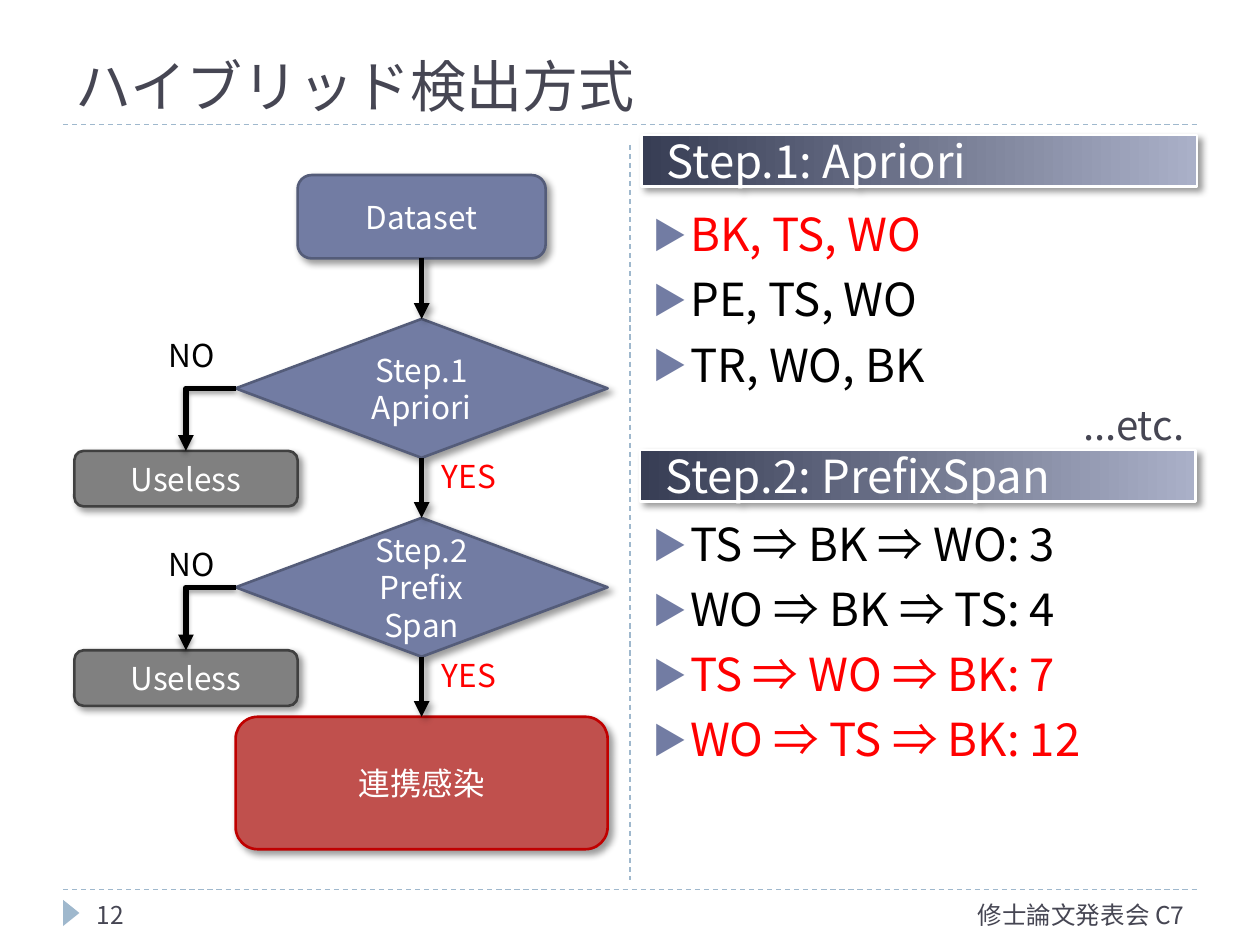
"""Build the slide on the hybrid detection method."""
from lxml.etree import SubElement as Sub
from pptx import Presentation
from pptx.dml.color import RGBColor
from pptx.enum.dml import MSO_LINE as Dash
from pptx.enum.shapes import MSO_CONNECTOR as Conn, MSO_SHAPE as Form
from pptx.enum.text import MSO_ANCHOR as Anchor, MSO_AUTO_SIZE as Fit, PP_ALIGN as Align
from pptx.oxml import parse_xml
from pptx.oxml.ns import nsdecls, qn
from pptx.util import Cm, Pt

FONT = "Noto Sans CJK JP"
WHITE = RGBColor(0xFF, 0xFF, 0xFF)
BLACK = RGBColor(0x00, 0x00, 0x00)
RED = RGBColor(0xFF, 0x00, 0x00)
SLATE = RGBColor(0x46, 0x46, 0x53)
PALE = RGBColor(0x9F, 0xB8, 0xCD)
BLUE = RGBColor(0x72, 0x7C, 0xA3)
NAVY = RGBColor(0x54, 0x5C, 0x79)
GREY = RGBColor(0x80, 0x80, 0x80)
COAL = RGBColor(0x40, 0x40, 0x40)
BRICK = RGBColor(0xC0, 0x50, 0x4D)
BLOOD = RGBColor(0xC0, 0x00, 0x00)
DEEP = RGBColor(0x37, 0x3D, 0x54)
MIST = RGBColor(0xAA, 0xB0, 0xC8)


def write(para, text, size, color, align=Align.LEFT):
    para.alignment = align
    run = para.add_run()
    run.text = text
    run.font.size = Pt(size)
    run.font.color.rgb = color
    run.font.name = FONT
    Sub(run.font._element, qn("a:ea"), typeface=FONT)


def shade(shape, blur=4, dist=3, angle=45):
    props = shape._element.spPr
    for old in props.findall(qn("a:effectLst")):
        props.remove(old)
    props.append(parse_xml(
        f'<a:effectLst {nsdecls("a")}><a:outerShdw blurRad="{Pt(blur)}" dist="{Pt(dist)}" '
        f'dir="{angle * 60000}" algn="tl" rotWithShape="0"><a:srgbClr val="000000">'
        '<a:alpha val="40000"/></a:srgbClr></a:outerShdw></a:effectLst>'))


deck = Presentation()
deck.slide_width, deck.slide_height = Cm(25.4), Cm(19.05)
slide = deck.slides.add_slide(deck.slide_layouts[1])
shapes = slide.shapes

for x1, y1, x2, y2 in [(1.27, 17.93, 24.13, 17.93), (1.27, 2.51, 24.13, 2.51),
                       (12.7, 2.92, 12.7, 17.73)]:
    rule = shapes.add_connector(Conn.STRAIGHT, Cm(x1), Cm(y1), Cm(x2), Cm(y2))
    rule.line.color.rgb = PALE
    rule.line.width = Pt(0.75)
    rule.line.dash_style = Dash.DASH
    Sub(rule._element.spPr, qn("a:effectLst"))

mark = shapes.add_shape(Form.ISOSCELES_TRIANGLE, Cm(1.17), Cm(18.24), Cm(0.53), Cm(0.33))
mark.rotation = 90
mark.shadow.inherit = False
mark.fill.solid()
mark.fill.fore_color.rgb = PALE
mark.line.fill.background()

title = shapes.title
title.left, title.top, title.width, title.height = Cm(1.27), Cm(0.64), Cm(22.86), Cm(1.88)
title.text_frame.auto_size = Fit.NONE
title.text_frame.vertical_anchor = Anchor.BOTTOM
write(title.text_frame.paragraphs[0], "ハイブリッド検出方式", 32, SLATE)

ALT, RHOMB, ROUND = Form.FLOWCHART_ALTERNATE_PROCESS, Form.FLOWCHART_DECISION, Form.ROUNDED_RECTANGLE
nodes = []
for form, mid, top, wide, high, fill, edge, lines in [
    (ALT, 8.5, 3.53, 5, 1.68, BLUE, NAVY, ["Dataset"]),
    (RHOMB, 8.5, 6.43, 7.5, 2.8, BLUE, NAVY, ["Step.1", "Apriori"]),
    (RHOMB, 8.5, 10.44, 7.5, 2.8, BLUE, NAVY, ["Step.2", "Prefix", "Span"]),
    (ALT, 8.5, 14.45, 7.5, 2.67, BRICK, BLOOD, ["連携感染"]),
    (ROUND, 3.75, 9.09, 4.5, 1.12, GREY, COAL, ["Useless"]),
    (ROUND, 3.75, 13.11, 4.5, 1.12, GREY, COAL, ["Useless"]),
]:
    node = shapes.add_shape(form, Cm(mid - wide / 2), Cm(top), Cm(wide), Cm(high))
    node.fill.solid()
    node.fill.fore_color.rgb = fill
    node.line.color.rgb = edge
    node.line.width = Pt(1.5)
    shade(node)
    frame = node.text_frame
    frame.vertical_anchor = Anchor.MIDDLE
    for i, text in enumerate(lines):
        para = frame.add_paragraph() if i else frame.paragraphs[0]
        write(para, text, 18, WHITE, Align.CENTER)
    nodes.append(node)

data, first, second, goal, drop1, drop2 = nodes
for start, end, bent in [(data, first, False), (first, second, False), (second, goal, False),
                         (first, drop1, True), (second, drop2, True)]:
    arrow = shapes.add_connector(Conn.ELBOW if bent else Conn.STRAIGHT, 0, 0, 0, 0)
    arrow.begin_connect(start, 1 if bent else 2)
    arrow.end_connect(end, 0)
    arrow.line.color.rgb = BLACK
    arrow.line.width = Pt(3)
    Sub(arrow.line._get_or_add_ln(), qn("a:tailEnd"), type="triangle")
    if bent:
        arrow._element.spPr.find(qn("a:prstGeom")).set("prst", "bentConnector2")
        shade(arrow, 3, 2, 90)
    else:
        shade(arrow)

for left, top, wide, high, text, size, color, align, anchor in [
    (8.66, 9.09, 2.74, 1.02, "YES", 18, RED, Align.LEFT, Anchor.TOP),
    (8.66, 13.11, 2.74, 1.02, "YES", 18, RED, Align.LEFT, Anchor.TOP),
    (3.15, 6.65, 2.74, 1.02, "NO", 18, BLACK, Align.LEFT, Anchor.TOP),
    (3.15, 10.87, 2.74, 1.02, "NO", 18, BLACK, Align.LEFT, Anchor.TOP),
    (17.78, 17.93, 6.35, 1.02, "修士論文発表会 C7", 14, SLATE, Align.RIGHT, Anchor.MIDDLE),
    (1.7, 17.93, 5.51, 1.02, "12", 14, SLATE, Align.LEFT, Anchor.MIDDLE),
]:
    frame = shapes.add_textbox(Cm(left), Cm(top), Cm(wide), Cm(high)).text_frame
    frame.word_wrap = True
    frame.vertical_anchor = anchor
    write(frame.paragraphs[0], text, size, color, align)

body = slide.placeholders[1]
body.left, body.top, body.width, body.height = Cm(12.9), Cm(2.72), Cm(11.23), Cm(15.19)
frame = body.text_frame
frame.auto_size = Fit.NONE
frame.margin_top = Cm(1.44)
for i, (text, color, gap) in enumerate([
    ("BK, TS, WO", RED, 0), ("PE, TS, WO", BLACK, 6), ("TR, WO, BK", BLACK, 6),
    ("...etc.", SLATE, 5),
    ("TS ⇒ BK ⇒ WO: 3", BLACK, 38.6), ("WO ⇒ BK ⇒ TS: 4", BLACK, 6),
    ("TS ⇒ WO ⇒ BK: 7", RED, 6), ("WO ⇒ TS ⇒ BK: 12", RED, 6),
]):
    para = frame.add_paragraph() if i else frame.paragraphs[0]
    props = para._p.get_or_add_pPr()
    props.set("marL", str(Cm(0.76)))
    para.space_before = Pt(gap)
    if color == SLATE:
        para.level = 1
        props.set("indent", "0")
        Sub(props, qn("a:buNone"))
        write(para, text, 23, color, Align.RIGHT)
    else:
        props.set("indent", str(-Cm(0.76)))
        Sub(Sub(props, qn("a:buClr")), qn("a:srgbClr"), val=str(BLUE))
        Sub(props, qn("a:buSzPct"), val="76000")
        Sub(props, qn("a:buFont"), typeface=FONT)
        Sub(props, qn("a:buChar"), char="▶")
        write(para, text, 26, color)

for left, top, text in [(12.93, 2.72, "Step.1: Apriori"), (12.9, 9.07, "Step.2: PrefixSpan")]:
    band = shapes.add_shape(Form.RECTANGLE, Cm(left), Cm(top), Cm(11.2), Cm(1.04))
    band.fill.gradient()
    band.fill.gradient_angle = 0
    for stop, color in zip(band.fill.gradient_stops, (DEEP, MIST)):
        stop.color.rgb = color
    band.line.color.rgb = WHITE
    band.line.width = Pt(1.5)
    shade(band)
    frame = band.text_frame
    frame.vertical_anchor = Anchor.MIDDLE
    frame.margin_left = Cm(0.51)
    frame.margin_top = frame.margin_right = frame.margin_bottom = 0
    write(frame.paragraphs[0], text, 26, WHITE)

deck.save("out.pptx")
